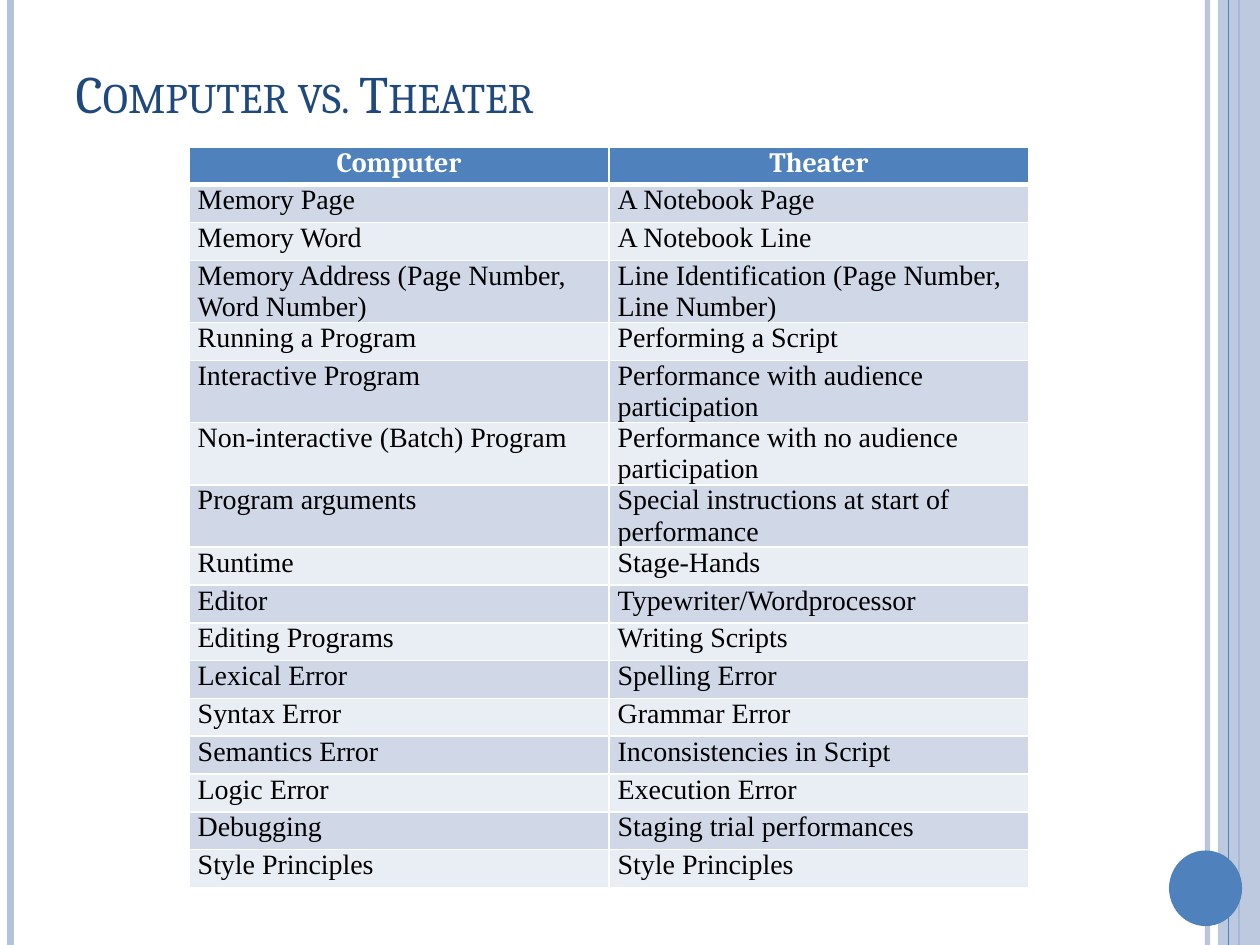
from lxml.etree import SubElement
from pptx import Presentation
from pptx.dml.color import RGBColor
from pptx.enum.shapes import MSO_CONNECTOR, MSO_SHAPE
from pptx.enum.text import MSO_ANCHOR, PP_ALIGN
from pptx.oxml import parse_xml
from pptx.oxml.ns import nsdecls, qn
from pptx.util import Pt

WHITE = RGBColor(0xFF, 0xFF, 0xFF)
BLACK = RGBColor(0, 0, 0)
NAVY = RGBColor(0x1F, 0x49, 0x7D)
BLUE = RGBColor(0x4F, 0x81, 0xBD)
PALE = RGBColor(0xB3, 0xC1, 0xDB)
BANDS = RGBColor(0xD0, 0xD8, 0xE8), RGBColor(0xE9, 0xED, 0xF4)

WIDTH, HEIGHT = 720, 540
TITLE = "Computer vs. Theater"
ROWS = [
    ("Computer", "Theater"),
    ("Memory Page", "A Notebook Page"),
    ("Memory Word", "A Notebook Line"),
    ("Memory Address (Page Number, Word Number)",
     "Line Identification (Page Number, Line Number)"),
    ("Running a Program", "Performing a Script"),
    ("Interactive Program", "Performance with audience participation"),
    ("Non-interactive (Batch) Program",
     "Performance with no audience participation"),
    ("Program arguments", "Special instructions at start of performance"),
    ("Runtime", "Stage-Hands"),
    ("Editor", "Typewriter/Wordprocessor"),
    ("Editing Programs", "Writing Scripts"),
    ("Lexical Error", "Spelling Error"),
    ("Syntax Error", "Grammar Error"),
    ("Semantics Error", "Inconsistencies in Script"),
    ("Logic Error", "Execution Error"),
    ("Debugging", "Staging trial performances"),
    ("Style Principles", "Style Principles"),
]
# x, line width, colour, opacity in percent
BACK_RULES = [(690, 3, PALE, 93), (6, 4.5, PALE, 100), (708, 1.5, BLUE, 100)]
FRONT_RULE = (702, 0.75, BLUE, 100)


def fade(fill, part):
    """Set the opacity of a solid fill, in percent."""
    if part < 100:
        color = fill._xPr.find(qn("a:solidFill"))[0]
        SubElement(color, qn("a:alpha"), val=str(part * 1000))


def add_rule(shapes, x, width, color, part):
    rule = shapes.add_connector(
        MSO_CONNECTOR.STRAIGHT, Pt(x), Pt(0), Pt(x), Pt(HEIGHT))
    rule.line.width = Pt(width)
    rule.line.color.rgb = color
    fade(rule.line.fill, part)
    SubElement(rule._element.spPr, qn("a:effectLst"))


def add_solid(shapes, kind, box, color, part=100):
    shape = shapes.add_shape(kind, *map(Pt, box))
    shape.shadow.inherit = False
    shape.fill.solid()
    shape.fill.fore_color.rgb = color
    fade(shape.fill, part)
    shape.line.fill.background()


def add_edges(cell, top, bottom):
    """Draw white cell borders; the widths are in points."""
    widths = {"lnL": 1, "lnR": 1, "lnT": top, "lnB": bottom}
    for i, (tag, width) in enumerate(widths.items()):
        cell._tc.get_or_add_tcPr().insert(i, parse_xml(
            f'<a:{tag} {nsdecls("a")} w="{Pt(width)}"><a:solidFill>'
            f'<a:srgbClr val="{WHITE}"/></a:solidFill></a:{tag}>'))


def set_font(font, name, size, color, bold=False):
    font.name, font.size, font.bold = name, Pt(size), bold
    font.color.rgb = color


def fill_cell(cell, text, row):
    head = row == 0
    cell.margin_left = cell.margin_right = Pt(5)
    cell.margin_top = cell.margin_bottom = Pt(0)
    cell.fill.solid()
    cell.fill.fore_color.rgb = BLUE if head else BANDS[(row - 1) % 2]
    add_edges(cell, 3 if row == 1 else 1, 3 if head else 1)
    cell.text = text
    para = cell.text_frame.paragraphs[0]
    if head:
        para.alignment = PP_ALIGN.CENTER
        set_font(para.font, "Cambria", 16, WHITE, True)
    else:
        set_font(para.font, "Times New Roman", 16, BLACK)


def add_title(slide):
    title = slide.shapes.title
    title.left, title.top, title.width, title.height = map(
        Pt, (36, 21.6, 624, 62.4))
    title.text = TITLE
    title.text_frame.vertical_anchor = MSO_ANCHOR.MIDDLE
    para = title.text_frame.paragraphs[0]
    para.alignment = PP_ALIGN.LEFT
    set_font(para.font, "Cambria", 30, NAVY)
    para.runs[0]._r.get_or_add_rPr().set("cap", "small")


def add_grid(shapes):
    high = 21.6
    table = shapes.add_table(
        len(ROWS), 2, Pt(108), Pt(84), Pt(480), Pt(high * len(ROWS))).table
    for r, texts in enumerate(ROWS):
        table.rows[r].height = Pt(high)
        for c, text in enumerate(texts):
            fill_cell(table.cell(r, c), text, r)


def main():
    deck = Presentation()
    deck.slide_width, deck.slide_height = Pt(WIDTH), Pt(HEIGHT)
    slide = deck.slides.add_slide(deck.slide_layouts[5])
    shapes = slide.shapes
    for rule in BACK_RULES:
        add_rule(shapes, *rule)
    add_solid(shapes, MSO_SHAPE.RECTANGLE, (696, 0, 24, HEIGHT), PALE, 87)
    add_rule(shapes, *FRONT_RULE)
    add_solid(shapes, MSO_SHAPE.OVAL, (668, 486, 41.76, 43.2), BLUE)
    add_title(slide)
    add_grid(shapes)
    deck.save("out.pptx")


if __name__ == "__main__":
    main()
